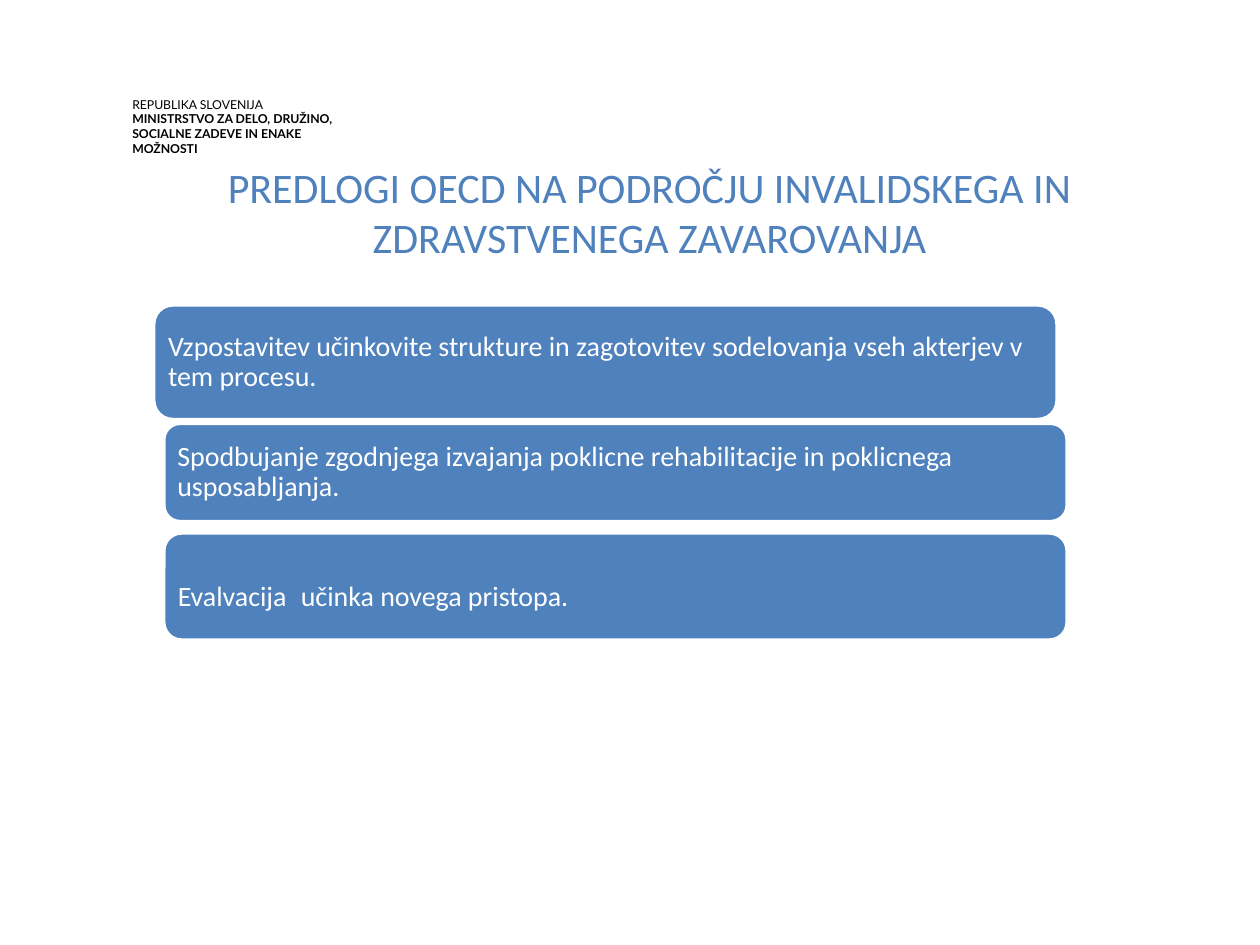
import pptx
import pptx.dml.color
import pptx.enum.shapes
import pptx.enum.text
import pptx.util
from pptx.util import Inches

BLUE = "4F81BD"
WHITE = "FFFFFF"
BLACK = "000000"

# Each proposal: left, top, width, height, then its runs of text and size
PROPOSALS = [
    (1.22, 2.42, 7.17, 0.91,
     [("Vzpostavitev učinkovite strukture in zagotovitev sodelovanja "
       "vseh akterjev v tem procesu.", 16)]),
    (1.30, 3.36, 7.17, 0.78,
     [("Spodbujanje zgodnjega izvajanja poklicne rehabilitacije "
       "in poklicnega usposabljanja.", 16)]),
    (1.30, 4.23, 7.17, 0.85,
     [("Evalvacija", 16), (" ", 36), ("učinka novega pristopa.", 16)]),
]


def color(hex_string):
    return pptx.dml.color.RGBColor.from_string(hex_string)


def set_font(font, name, size, hex_string, bold=False):
    font.name = name
    font.size = pptx.util.Pt(size)
    font.color.rgb = color(hex_string)
    font.bold = bold


def set_frame(frame, anchor, horizontal, vertical):
    frame.word_wrap = True
    frame.auto_size = pptx.enum.text.MSO_AUTO_SIZE.NONE
    frame.vertical_anchor = anchor
    frame.margin_left = frame.margin_right = Inches(horizontal)
    frame.margin_top = frame.margin_bottom = Inches(vertical)


def add_ministry_name(slide):
    box = slide.shapes.add_textbox(
        Inches(1.05), Inches(0.77), Inches(1.82), Inches(0.34))
    frame = box.text_frame
    set_frame(frame, pptx.enum.text.MSO_ANCHOR.TOP, 0, 0)
    frame.text = ("REPUBLIKA SLOVENIJA\n"
                  "MINISTRSTVO ZA DELO, DRUŽINO, SOCIALNE ZADEVE IN ENAKE MOŽNOSTI")
    for paragraph, bold in zip(frame.paragraphs, (False, True)):
        paragraph.line_spacing = pptx.util.Pt(8.4)
        set_font(paragraph.font, "Lato", 7, BLACK, bold)


def add_title(slide, text):
    title = slide.shapes.title
    title.left, title.top = Inches(1.22), Inches(1.23)
    title.width, title.height = Inches(7.87), Inches(0.91)
    set_frame(title.text_frame, pptx.enum.text.MSO_ANCHOR.TOP, 0.1, 0.05)
    title.text_frame.text = text
    paragraph = title.text_frame.paragraphs[0]
    paragraph.alignment = pptx.enum.text.PP_ALIGN.CENTER
    set_font(paragraph.font, "Calibri", 24, BLUE)


def add_proposal(slide, left, top, width, height, runs):
    shape = slide.shapes.add_shape(
        pptx.enum.shapes.MSO_SHAPE.ROUNDED_RECTANGLE,
        Inches(left), Inches(top), Inches(width), Inches(height))
    shape.shadow.inherit = False
    shape.fill.solid()
    shape.fill.fore_color.rgb = color(BLUE)
    shape.line.color.rgb = color(WHITE)
    shape.line.width = pptx.util.Pt(2)
    set_frame(shape.text_frame, pptx.enum.text.MSO_ANCHOR.MIDDLE, 0.07, 0.07)
    paragraph = shape.text_frame.paragraphs[0]
    paragraph.alignment = pptx.enum.text.PP_ALIGN.LEFT
    paragraph.line_spacing = 0.9
    for text, size in runs:
        run = paragraph.add_run()
        run.text = text
        set_font(run.font, "Calibri", size, WHITE)


def main():
    presentation = pptx.Presentation()
    presentation.slide_width = Inches(10)
    presentation.slide_height = Inches(7.5)
    slide = presentation.slides.add_slide(presentation.slide_layouts[5])

    # Heading
    add_ministry_name(slide)
    add_title(slide, "PREDLOGI OECD NA PODROČJU INVALIDSKEGA IN "
                     "ZDRAVSTVENEGA ZAVAROVANJA")

    # Proposals
    for proposal in PROPOSALS:
        add_proposal(slide, *proposal)

    presentation.save("out.pptx")


if __name__ == "__main__":
    main()
